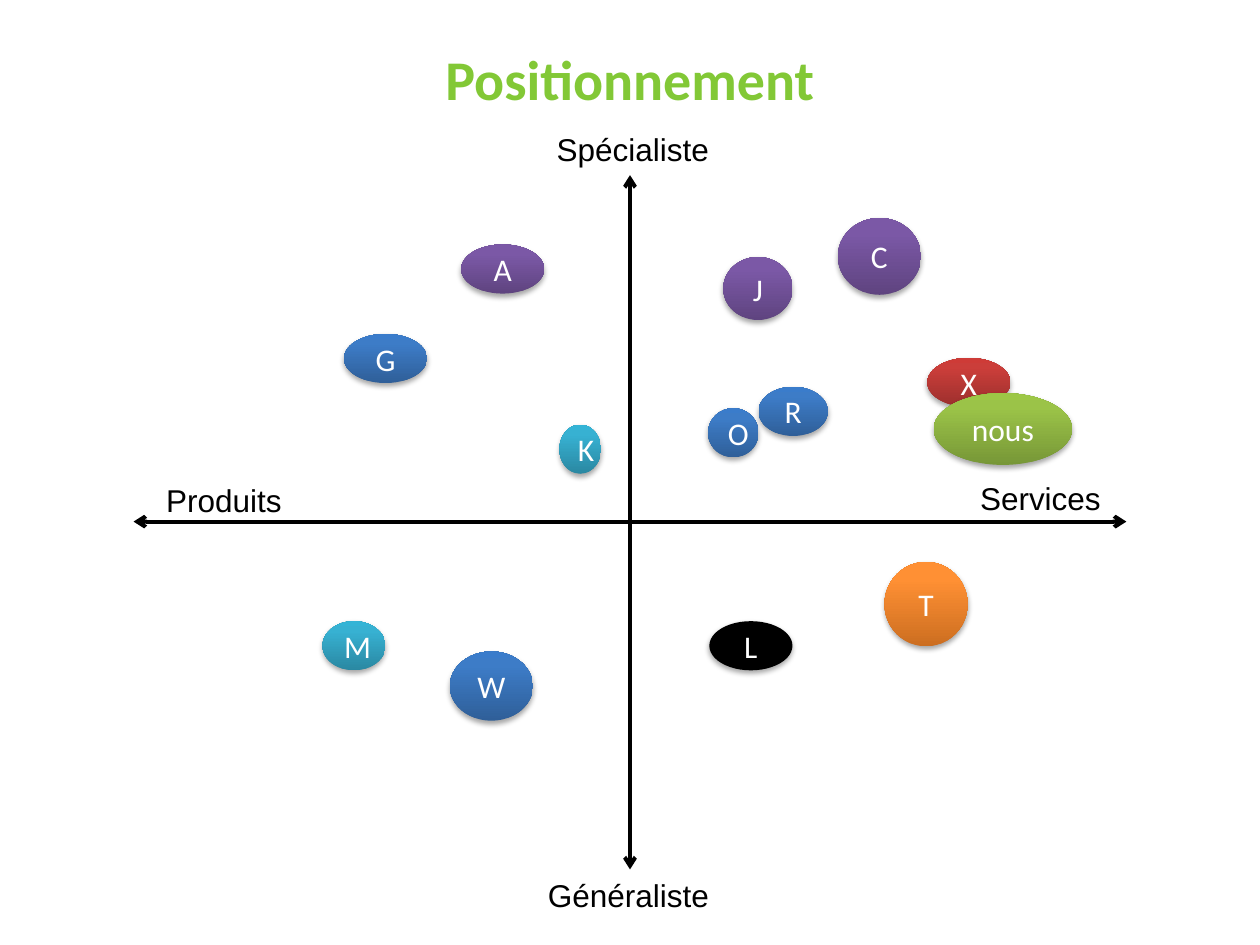
from lxml import etree
from pptx import Presentation
from pptx.dml.color import RGBColor
from pptx.enum.shapes import MSO_CONNECTOR, MSO_SHAPE
from pptx.enum.text import MSO_ANCHOR, MSO_AUTO_SIZE, PP_ALIGN
from pptx.oxml.ns import qn
from pptx.util import Inches, Pt

OVAL = MSO_SHAPE.OVAL
STRAIGHT = MSO_CONNECTOR.STRAIGHT
CENTER = PP_ALIGN.CENTER
MIDDLE = MSO_ANCHOR.MIDDLE
GROW = MSO_AUTO_SIZE.SHAPE_TO_FIT_TEXT

COLUMNS, ROWS = 100, 75
CELL = Inches(0.1)

# Gradient colours from bottom to top, at these positions in percent
STOPS = (0, 80, 100)
PURPLE = ("5F4480", "7B58A6", "7C57A8")
TEAL = ("2A88A2", "37B1D2", "34B4D6")
BLUE = ("2F5F99", "3D7CC7", "3A7CCB")
RED = ("9C2F2D", "CB3E3A", "CE3B37")
ORANGE = ("CC6E20", "FF9034", "FF9136")
GREEN = ("779737", "9BC348", "9DC746")
BLACK = ("000000",)

# Column, row, width and height in grid cells
AXES = [(50, 69, 50, 13.9), (10.6, 41.4, 89.4, 41.4)]
LABELS = [
    ("Services", 76.8, 37.5, 11.7, 4),
    ("Produits", 12.2, 37.7, 11.3, 4),
    ("Spécialiste", 43.2, 9.8, 14.2, 4),
    ("Généraliste", 42.5, 69, 14.9, 4),
]
BUBBLES = [
    ("A", PURPLE, 36.6, 19.4, 6.6, 3.9),
    ("M", TEAL, 25.6, 49.3, 5, 3.9),
    ("G", BLUE, 27.3, 26.5, 6.6, 3.9),
    ("K", TEAL, 44.4, 33.7, 3.3, 3.9),
    ("J", PURPLE, 57.4, 20.4, 5.5, 5),
    ("C", PURPLE, 66.5, 17.3, 6.6, 6.1),
    ("X", RED, 73.6, 28.4, 6.6, 3.9),
    ("O", BLUE, 56.2, 32.4, 4, 3.9),
    ("L", BLACK, 56.3, 49.3, 6.6, 3.9),
    ("T", ORANGE, 70.2, 44.6, 6.6, 6.7),
    ("R", BLUE, 60.2, 30.7, 5.5, 3.9),
    ("nous", GREEN, 74.1, 31.2, 11, 5.7),
    ("W", BLUE, 35.7, 51.7, 6.6, 5.5),
]


def cells(*counts):
    return [int(count * CELL) for count in counts]


def rgb(color):
    return RGBColor.from_string(color)


def add_element(parent, tag, **attributes):
    return etree.SubElement(parent, qn(tag), attributes)


def add_color(parent, color):
    return add_element(parent, "a:srgbClr", val=color)


def write(shape, text, size, font_name, color, bold=False):
    shape.text_frame.text = text
    paragraph = shape.text_frame.paragraphs[0]
    font = paragraph.runs[0].font
    font.size, font.name, font.bold = Pt(size), font_name, bold
    font.color.rgb = rgb(color)
    return paragraph


def add_title(slide, text):
    box = slide.shapes.add_textbox(*cells(5, 3, 90, 6.4))
    box.text_frame.word_wrap = True
    box.text_frame.vertical_anchor = MIDDLE
    write(box, text, 32, "Calibri", "82C836", bold=True).alignment = CENTER


def add_label(slide, text, *place):
    box = slide.shapes.add_textbox(*cells(*place))
    box.text_frame.word_wrap = False
    box.text_frame.auto_size = GROW
    write(box, text, 18, "Arial", "000000")


def add_axis(slide, *ends):
    """Draw a line with an open arrow at both ends."""
    axis = slide.shapes.add_connector(STRAIGHT, *cells(*ends))
    axis.line.color.rgb = rgb("000000")
    axis.line.width = Pt(2.25)
    properties = axis._element.spPr
    line = properties.find(qn("a:ln"))
    for end in ("a:headEnd", "a:tailEnd"):
        add_element(line, end, type="arrow")
    add_element(properties, "a:effectLst")


def fill_shape(shape, colors):
    """Fill with one plain colour, or with a gradient from bottom to top."""
    if len(colors) == 1:
        shape.fill.solid()
        shape.fill.fore_color.rgb = rgb(colors[0])
        return
    shape.fill.gradient()
    shape.fill.gradient_angle = 90
    stop_list = shape._element.spPr.find(f".//{qn('a:gsLst')}")
    for stop in list(stop_list):
        stop_list.remove(stop)
    for position, color in zip(STOPS, colors):
        add_color(add_element(stop_list, "a:gs", pos=str(position * 1000)), color)


def add_shadow(shape):
    shape.shadow.inherit = False
    effects = shape._element.spPr.find(qn("a:effectLst"))
    shadow = add_element(effects, "a:outerShdw", blurRad=str(Pt(3.1)),
                         dist=str(Pt(1.8)), dir="5400000", rotWithShape="0")
    add_element(add_color(shadow, "000000"), "a:alpha", val="35000")


def add_bubble(slide, text, colors, *place):
    bubble = slide.shapes.add_shape(OVAL, *cells(*place))
    fill_shape(bubble, colors)
    bubble.line.fill.background()
    add_shadow(bubble)
    bubble.text_frame.vertical_anchor = MIDDLE
    write(bubble, text, 18, "Calibri", "FFFFFF").alignment = CENTER


def main():
    presentation = Presentation()
    presentation.slide_width, presentation.slide_height = cells(COLUMNS, ROWS)
    slide = presentation.slides.add_slide(presentation.slide_layouts[6])
    add_title(slide, "Positionnement")
    for axis in AXES:
        add_axis(slide, *axis)
    for label in LABELS:
        add_label(slide, *label)
    for bubble in BUBBLES:
        add_bubble(slide, *bubble)
    presentation.save("out.pptx")


if __name__ == "__main__":
    main()
